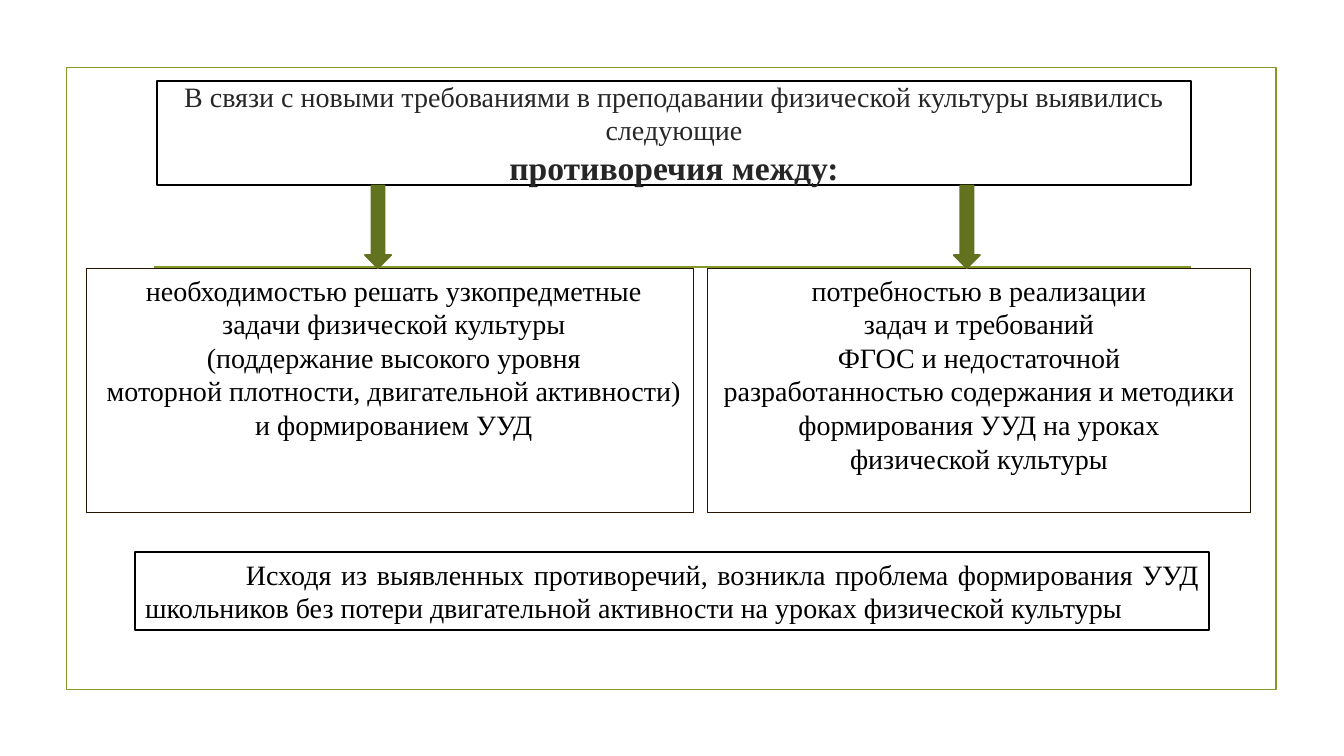
from dataclasses import dataclass

from pptx import Presentation
from pptx.dml.color import RGBColor
from pptx.enum.shapes import MSO_CONNECTOR, MSO_SHAPE
from pptx.enum.text import MSO_ANCHOR, MSO_AUTO_SIZE, PP_ALIGN
from pptx.oxml.ns import qn
from pptx.shapes.autoshape import Shape
from pptx.slide import Slide
from pptx.util import Inches, Pt
from lxml.etree import SubElement

FONT = "Times New Roman"
GREEN = "83992A"
BLACK = "000000"
BOX_TOP = 2.66
TITLE_BOTTOM = 1.84


@dataclass
class Frame:
    left: float
    top: float
    width: float
    height: float
    line: str
    line_width: float


@dataclass
class Contradiction:
    frame: Frame
    left_inset: float
    lines: list[str]


CONTRADICTIONS = [
    Contradiction(
        Frame(0.86, BOX_TOP, 6.02, 2.42, "261300", 0.75),
        0.17,
        [
            "необходимостью решать узкопредметные",
            "задачи физической культуры",
            "(поддержание высокого уровня",
            "моторной плотности, двигательной активности)",
            "и формированием УУД",
        ],
    ),
    Contradiction(
        Frame(7.02, BOX_TOP, 5.38, 2.42, "261300", 0.75),
        0.1,
        [
            "потребностью в реализации",
            "задач и требований",
            "ФГОС и недостаточной",
            "разработанностью содержания и методики",
            "формирования УУД на уроках",
            "физической культуры",
        ],
    ),
]
ARROW_LEFTS = [3.62, 9.46]


def rgb(value: str) -> RGBColor:
    return RGBColor.from_string(value)


def outline(shape: Shape, color: str, width: float) -> None:
    shape.line.color.rgb = rgb(color)
    shape.line.width = Pt(width)


def add_frame(slide: Slide, frame: Frame) -> Shape:
    shape = slide.shapes.add_shape(
        MSO_SHAPE.RECTANGLE, Inches(frame.left), Inches(frame.top),
        Inches(frame.width), Inches(frame.height),
    )
    shape.shadow.inherit = False
    shape.fill.background()
    outline(shape, frame.line, frame.line_width)
    return shape


def write(shape: Shape, lines: list[str], align: PP_ALIGN, color: str = BLACK) -> None:
    text_frame = shape.text_frame
    text_frame.text = "\n".join(lines)
    text_frame.auto_size = MSO_AUTO_SIZE.NONE
    text_frame.vertical_anchor = MSO_ANCHOR.TOP
    for paragraph in text_frame.paragraphs:
        paragraph.alignment = align
        for run in paragraph.runs:
            run.font.name = FONT
            run.font.size = Pt(20)
            run.font.color.rgb = rgb(color)


def add_title(slide: Slide) -> None:
    title = slide.shapes.title
    title.left, title.top = Inches(1.56), Inches(0.8)
    title.width, title.height = Inches(10.25), Inches(TITLE_BOTTOM - 0.8)
    outline(title, BLACK, 1.5)
    write(
        title,
        [
            "В связи с новыми требованиями в преподавании физической культуры выявились следующие",
            "противоречия между:",
        ],
        PP_ALIGN.CENTER,
        "262626",
    )
    text_frame = title.text_frame
    text_frame.word_wrap = True
    text_frame.vertical_anchor = MSO_ANCHOR.MIDDLE
    text_frame.margin_top = text_frame.margin_bottom = 0
    for paragraph in text_frame.paragraphs:
        paragraph.line_spacing = 1.0
        paragraph.space_before = Pt(0)
    emphasis = text_frame.paragraphs[1].runs[0].font
    emphasis.size = Pt(24)
    emphasis.bold = True


def add_divider(slide: Slide) -> None:
    divider = slide.shapes.add_connector(
        MSO_CONNECTOR.STRAIGHT, Inches(1.53), Inches(2.65), Inches(11.81), Inches(2.65)
    )
    divider.line.color.rgb = rgb(GREEN)
    divider.line.width = Pt(1.25)
    SubElement(divider._element.spPr, qn("a:effectLst"))


def add_contradiction(slide: Slide, contradiction: Contradiction) -> None:
    box = add_frame(slide, contradiction.frame)
    write(box, contradiction.lines, PP_ALIGN.CENTER)
    box.text_frame.word_wrap = False
    box.text_frame.margin_left = Inches(contradiction.left_inset)


def add_arrow(slide: Slide, left: float) -> None:
    arrow = slide.shapes.add_shape(
        MSO_SHAPE.DOWN_ARROW, Inches(left), Inches(TITLE_BOTTOM),
        Inches(0.26), Inches(BOX_TOP - TITLE_BOTTOM),
    )
    arrow.shadow.inherit = False
    arrow.fill.solid()
    arrow.fill.fore_color.rgb = rgb("62731F")
    outline(arrow, "61711F", 1.25)


def add_conclusion(slide: Slide) -> None:
    conclusion = add_frame(slide, Frame(1.34, 5.48, 10.65, 0.77, BLACK, 1.25))
    write(
        conclusion,
        [
            "Исходя из выявленных противоречий, возникла проблема формирования УУД "
            "школьников без потери двигательной активности на уроках физической культуры"
        ],
        PP_ALIGN.JUSTIFY,
    )
    conclusion.text_frame.word_wrap = True
    properties = conclusion.text_frame.paragraphs[0]._p.get_or_add_pPr()
    properties.set("indent", str(Inches(1)))


def main() -> None:
    presentation = Presentation()
    presentation.slide_width = Inches(13.33)
    presentation.slide_height = Inches(7.5)
    slide = presentation.slides.add_slide(presentation.slide_layouts[5])
    add_frame(slide, Frame(0.66, 0.67, 12, 6.17, GREEN, 1.25))
    add_divider(slide)
    add_title(slide)
    for contradiction in CONTRADICTIONS:
        add_contradiction(slide, contradiction)
    for left in ARROW_LEFTS:
        add_arrow(slide, left)
    add_conclusion(slide)
    presentation.save("out.pptx")


if __name__ == "__main__":
    main()
